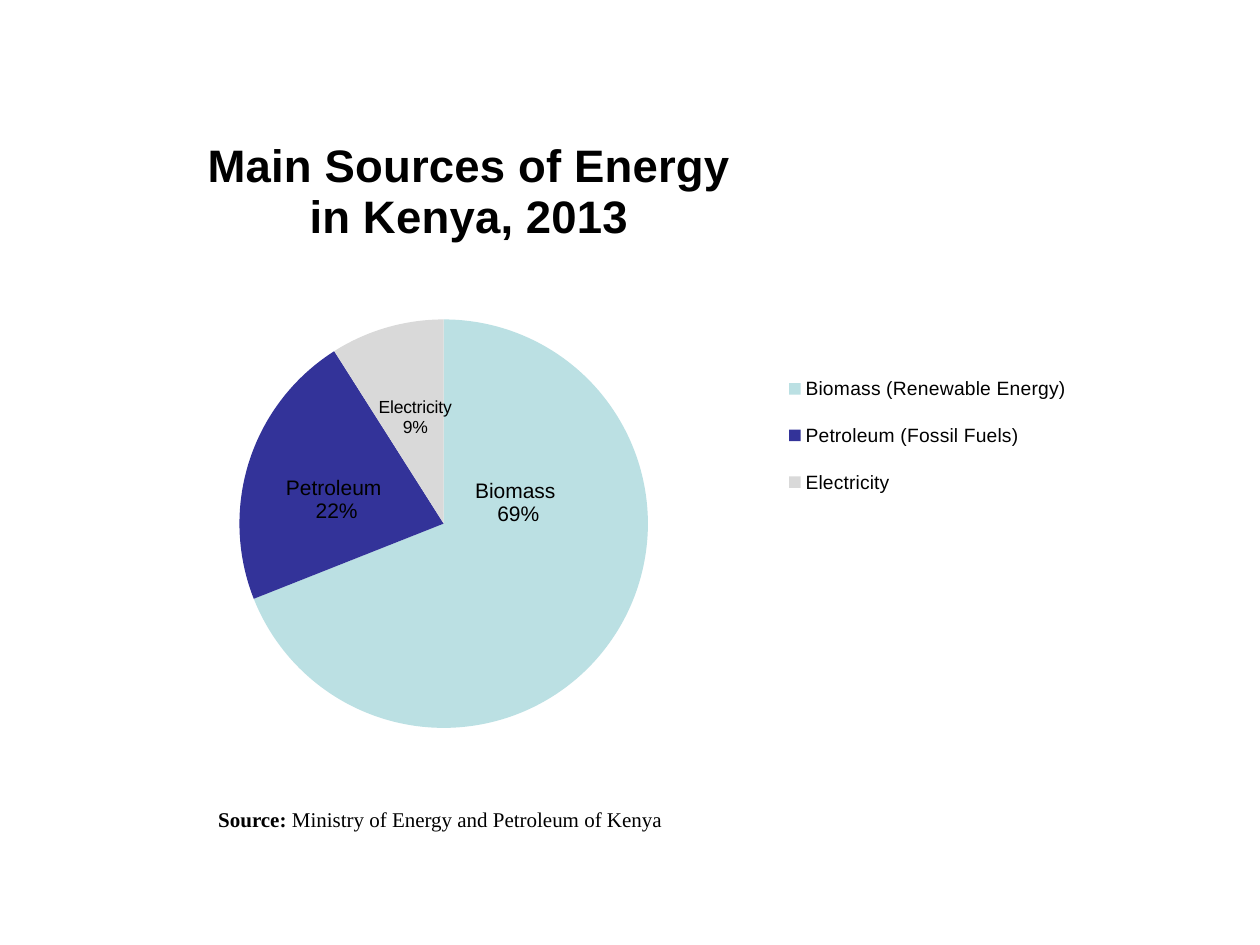
"""Build a slide with a pie chart of the main sources of energy in Kenya."""
import pptx
import pptx.chart.data
import pptx.dml.color
import pptx.enum.chart
import pptx.enum.text
import pptx.oxml
import pptx.oxml.ns
import pptx.util

Inches, Pt = pptx.util.Inches, pptx.util.Pt
RGBColor = pptx.dml.color.RGBColor

COLORS = {"text": "000000", "biomass": "BBE0E3", "petroleum": "333399", "electricity": "D9D9D9"}
SOURCES = [
    ("Biomass (Renewable Energy)", 0.69, "biomass", "Biomass \n69%", 12, (-0.01, -0.1)),
    ("Petroleum (Fossil Fuels)", 0.22, "petroleum", "Petroleum \n22%", 12, (-0.01, 0.01)),
    ("Electricity", 0.09, "electricity", "Electricity\n9%", 10, (0, -0.01)),
]


def set_font(font, name, size, bold=False):
    font.name, font.size, font.bold = name, Pt(size), bold
    font.color.rgb = RGBColor.from_string(COLORS["text"])


def set_layout(parent, index, settings):
    for layout in parent.findall(pptx.oxml.ns.qn("c:layout")):
        parent.remove(layout)
    children = "".join(f'<c:{tag} val="{value}"/>' for tag, value in settings.items())
    parent.insert(index, pptx.oxml.parse_xml(
        f'<c:layout {pptx.oxml.ns.nsdecls("c")}>'
        f"<c:manualLayout>{children}</c:manualLayout></c:layout>"))


presentation = pptx.Presentation()
presentation.slide_width, presentation.slide_height = Inches(10), Inches(7.5)
slide = presentation.slides.add_slide(presentation.slide_layouts[6])

chart_data = pptx.chart.data.CategoryChartData(number_format="0%")
chart_data.categories = [source[0] for source in SOURCES]
chart_data.add_series("Series 1", [source[1] for source in SOURCES])
chart = slide.shapes.add_chart(
    pptx.enum.chart.XL_CHART_TYPE.PIE,
    Inches(0.83), Inches(0.44), Inches(7.87), Inches(6.22), chart_data).chart
set_font(chart.font, "Arial", 10)

chart.has_title = True
title = chart.chart_title
title.include_in_layout = False
title.text_frame.text = "Main Sources of Energy\nin Kenya, 2013"
for paragraph in title.text_frame.paragraphs:
    set_font(paragraph.font, "Arial", 26, True)
    for run in paragraph.runs:
        set_font(run.font, "Arial", 26, True)
set_layout(title._element, 1, {"xMode": "edge", "yMode": "edge", "x": 0.1, "y": 0.1})

chart.has_legend = True
legend = chart.legend
legend.position = pptx.enum.chart.XL_LEGEND_POSITION.RIGHT
legend.include_in_layout = False
set_font(legend.font, "Arial", 11)
set_layout(legend._element, 1, {
    "xMode": "edge", "yMode": "edge", "x": 0.68, "y": 0.38, "w": 0.3, "h": 0.21})

plot = chart.plots[0]
plot.vary_by_categories = True
set_layout(plot._element.getparent(), 0, {
    "layoutTarget": "inner", "xMode": "edge", "yMode": "edge",
    "x": 0.136, "y": 0.284, "w": 0.412, "h": 0.627})

series = plot.series[0]
labels = series.data_labels
labels.show_value = True
labels.number_format, labels.number_format_is_linked = "0%", False
set_font(labels.font, "Arial", 12)
for index, (category, share, color, text, size, (shift_x, shift_y)) in enumerate(SOURCES):
    point = series.points[index]
    point.format.fill.solid()
    point.format.fill.fore_color.rgb = RGBColor.from_string(COLORS[color])
    point.format.line.fill.background()
    label = point.data_label
    label.text_frame.text = text
    label.position = pptx.enum.chart.XL_LABEL_POSITION.CENTER
    for paragraph in label.text_frame.paragraphs:
        for run in paragraph.runs:
            set_font(run.font, "Arial", size)
    set_layout(labels._element.findall(pptx.oxml.ns.qn("c:dLbl"))[index], 1,
               {"x": shift_x, "y": shift_y})

source_box = slide.shapes.add_textbox(Inches(1.61), Inches(6.35), Inches(3.77), Inches(0.3))
frame = source_box.text_frame
frame.word_wrap = False
frame.auto_size = pptx.enum.text.MSO_AUTO_SIZE.SHAPE_TO_FIT_TEXT
frame.vertical_anchor = pptx.enum.text.MSO_ANCHOR.MIDDLE
paragraph = frame.paragraphs[0]
paragraph.alignment = pptx.enum.text.PP_ALIGN.CENTER
for text, bold in [("Source:", True), (" Ministry of Energy and Petroleum of Kenya", False)]:
    run = paragraph.add_run()
    run.text = text
    set_font(run.font, "Times New Roman", 12, bold)

presentation.save("out.pptx")
